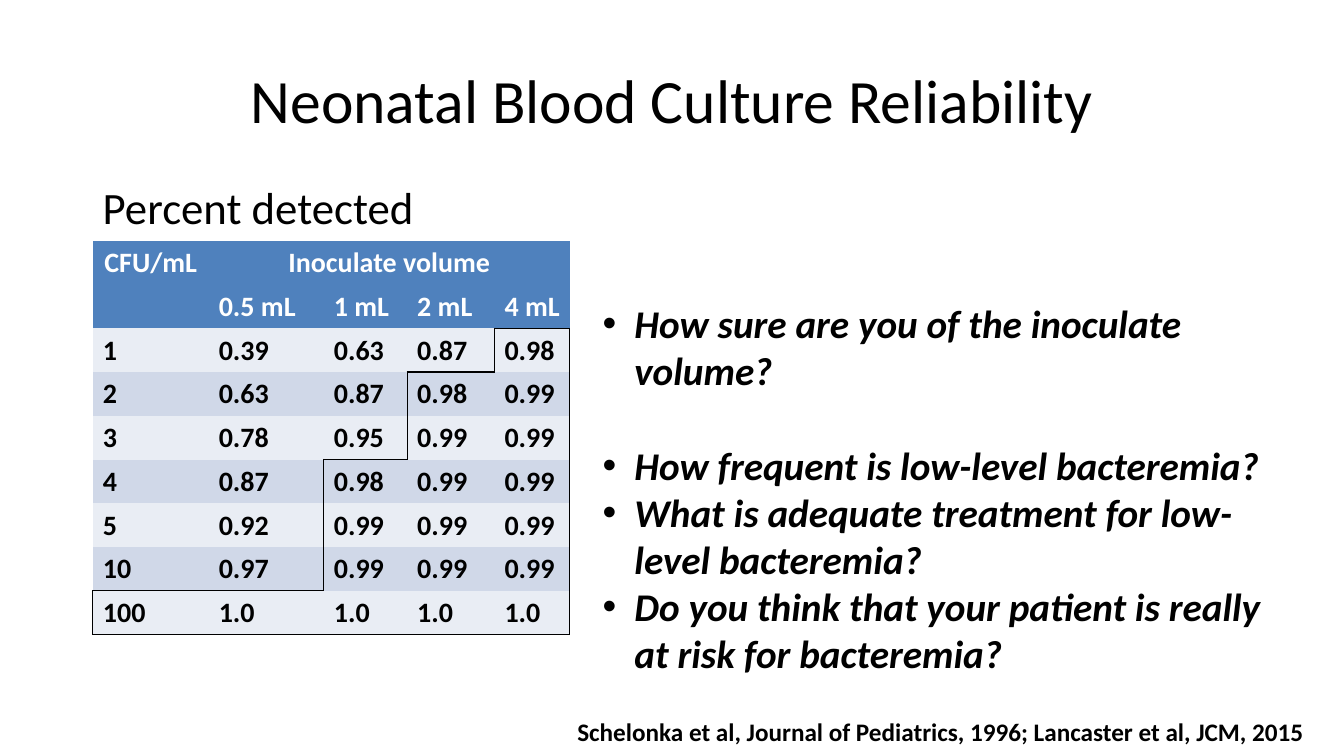
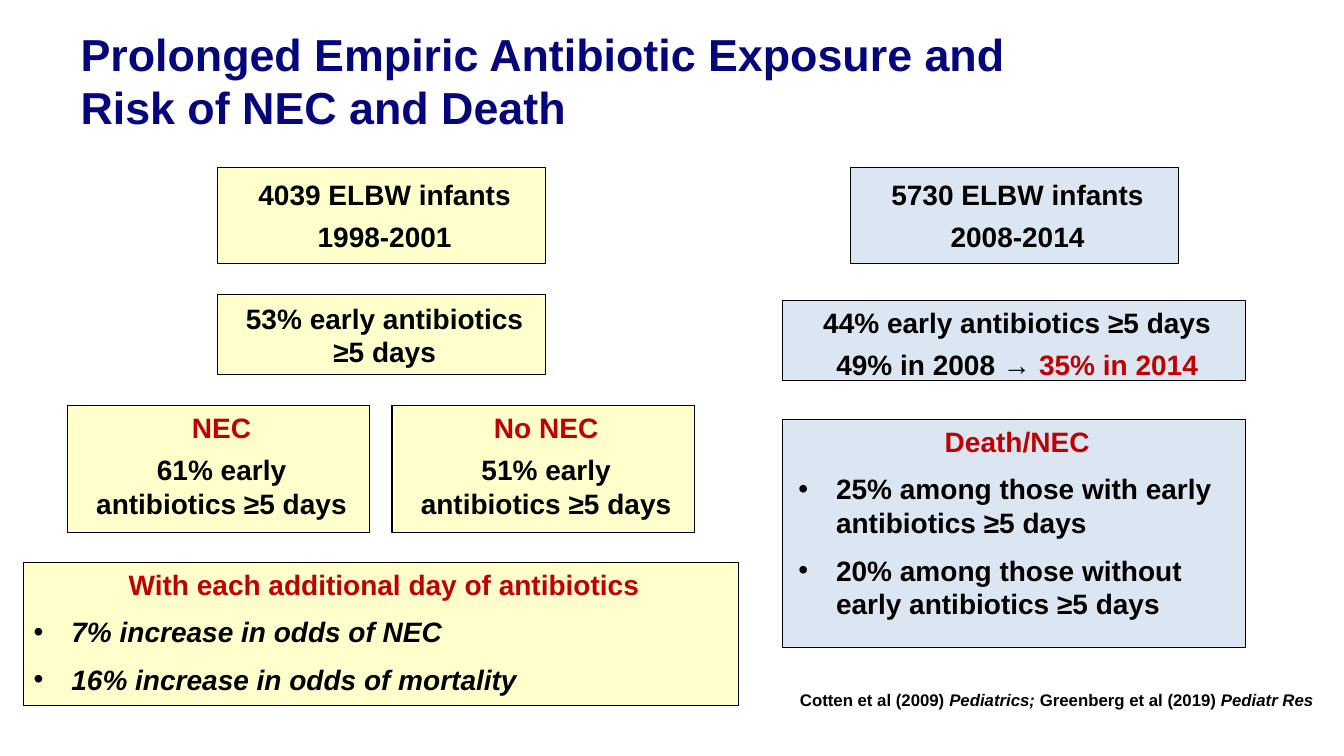
from dataclasses import dataclass
from typing import Optional

from lxml import etree
from pptx import Presentation
from pptx import util as u
from pptx.dml import color
from pptx.enum import shapes, text
from pptx.oxml import ns

COLORS = {
    "black": "000000",
    "white": "FFFFFF",
    "navy": "06067C",
    "red": "C00000",
    "yellow": "FFFFCC",
    "pale": "DCE6F2",
    "header": "4F81BD",
    "light": "E9EDF4",
    "dark": "D0D8E8",
}
LEFT, CENTER = text.PP_ALIGN.LEFT, text.PP_ALIGN.CENTER
TOP, MIDDLE = text.MSO_ANCHOR.TOP, text.MSO_ANCHOR.MIDDLE


@dataclass(frozen=True)
class Style:
    font: str
    size: float
    bold: bool = False
    color: str = "black"


@dataclass(frozen=True)
class Run:
    text: str
    color: Optional[str] = None
    italic: bool = False


@dataclass(frozen=True)
class Para:
    runs: tuple[Run, ...]
    align: text.PP_ALIGN = LEFT
    left: float = 0
    hang: float = 0
    before: float = 0
    after: float = 0


@dataclass(frozen=True)
class Box:
    left: float
    top: float
    width: float
    height: float
    paras: tuple[Para, ...]
    style: Style
    anchor: text.MSO_ANCHOR = TOP
    fill: Optional[str] = None


CAL_TITLE = Style("Calibri", 44)
CAL_BODY = Style("Calibri", 32)
CAL_POINT = Style("Calibri", 28, True)
CAL_SOURCE = Style("Calibri", 18, True)
CAL_HEAD = Style("Calibri", 20, True, "white")
CAL_CELL = Style("Calibri", 20, True)
ARIAL_TITLE = Style("Arial", 32, True, "navy")
ARIAL_BOX = Style("Arial", 20, True)
ARIAL_SOURCE = Style("Arial", 12, True)


def rgb(name: str) -> color.RGBColor:
    return color.RGBColor.from_string(COLORS[name])


def plain(words: str, align: text.PP_ALIGN = LEFT) -> Para:
    return Para((Run(words),), align)


def centered(*runs: Run, gap: float = 3) -> Para:
    return Para(runs, CENTER, left=0.15, before=gap, after=gap)


def bullet(words: str, left: float, hang: float, gap: float = 0,
           after: Optional[float] = None, italic: bool = False) -> Para:
    return Para((Run(words, italic=italic),), LEFT, left, hang, gap,
                gap if after is None else after)


def write(tf: text, paras: tuple[Para, ...], style: Style) -> None:
    for i, para in enumerate(paras):
        p = tf.paragraphs[0] if i == 0 else tf.add_paragraph()
        p.alignment = para.align
        p.space_before, p.space_after = u.Pt(para.before), u.Pt(para.after)
        pPr = p._p.get_or_add_pPr()
        pPr.set("marL", str(u.Cm(para.left)))
        pPr.set("indent", str(-u.Cm(para.hang)))
        if para.hang:
            etree.SubElement(pPr, ns.qn("a:buFont"), typeface="Arial")
            etree.SubElement(pPr, ns.qn("a:buChar"), char="•")
        for run in para.runs:
            for n, line in enumerate(run.text.split("\n")):
                if n:
                    p.add_line_break()
                r = p.add_run()
                r.text = line
                r.font.name, r.font.size = style.font, u.Pt(style.size)
                r.font.bold, r.font.italic = style.bold, run.italic
                r.font.color.rgb = rgb(run.color or style.color)


def draw_box(s, box: Box) -> None:
    frame = [u.Cm(v) for v in (box.left, box.top, box.width, box.height)]
    if box.fill:
        sp = s.shapes.add_shape(shapes.MSO_SHAPE.RECTANGLE, *frame)
        sp.shadow.inherit = False
        sp.fill.solid()
        sp.fill.fore_color.rgb = rgb(box.fill)
        sp.line.color.rgb = rgb("black")
        sp.line.width = u.Pt(0.75)
    else:
        sp = s.shapes.add_textbox(*frame)
    tf = sp.text_frame
    tf.word_wrap = True
    tf.vertical_anchor = box.anchor
    write(tf, box.paras, box.style)


COLUMNS = (2.92, 2.9, 2.1, 2.2, 1.9)
ROW_HEIGHT = 1.1
HEADER = (
    ("CFU/mL", "Inoculate volume", "", "", ""),
    ("", "0.5 mL", "1 mL", "2 mL", "4 mL"),
)
DETECTED = (
    ("1", "0.39", "0.63", "0.87", "0.98"),
    ("2", "0.63", "0.87", "0.98", "0.99"),
    ("3", "0.78", "0.95", "0.99", "0.99"),
    ("4", "0.87", "0.98", "0.99", "0.99"),
    ("5", "0.92", "0.99", "0.99", "0.99"),
    ("10", "0.97", "0.99", "0.99", "0.99"),
    ("100", "1.0", "1.0", "1.0", "1.0"),
)
RELIABLE_FROM = (5, 5, 4, 3, 3, 2, 2, 2, 0)
SIDES = (("a:lnL", 0, -1), ("a:lnR", 0, 1), ("a:lnT", -1, 0), ("a:lnB", 1, 0))


def reliable(row: int, col: int) -> bool:
    return (0 <= row < len(RELIABLE_FROM) and col < len(COLUMNS)
            and col >= RELIABLE_FROM[row])


def outline(cell, row: int, col: int) -> None:
    tcPr = cell._tc.get_or_add_tcPr()
    for i, (tag, down, across) in enumerate(SIDES):
        ln = etree.Element(ns.qn(tag), w=str(u.Pt(1)))
        if reliable(row, col) != reliable(row + down, col + across):
            solid = etree.SubElement(ln, ns.qn("a:solidFill"))
            etree.SubElement(solid, ns.qn("a:srgbClr"), val=COLORS["black"])
        else:
            etree.SubElement(ln, ns.qn("a:noFill"))
        tcPr.insert(i, ln)


def draw_table(s, left: float, top: float) -> None:
    rows = HEADER + DETECTED
    table = s.shapes.add_table(
        len(rows), len(COLUMNS), u.Cm(left), u.Cm(top),
        u.Cm(sum(COLUMNS)), u.Cm(ROW_HEIGHT * len(rows))).table
    for column, width in zip(table.columns, COLUMNS):
        column.width = u.Cm(width)
    for i, values in enumerate(rows):
        table.rows[i].height = u.Cm(ROW_HEIGHT)
        head = i < len(HEADER)
        for j, value in enumerate(values):
            cell = table.cell(i, j)
            cell.fill.solid()
            cell.fill.fore_color.rgb = rgb(
                "header" if head else ("light", "dark")[i % 2])
            outline(cell, i, j)
            if value:
                write(cell.text_frame,
                      (plain(value, CENTER if i == 0 else LEFT),),
                      CAL_HEAD if head else CAL_CELL)
    table.cell(0, 0).merge(table.cell(1, 0))
    table.cell(0, 1).merge(table.cell(0, 4))


def question(words: str, after: float = 0) -> Para:
    return bullet(words, 0.8, 0.8, after=after, italic=True)


def cohort(left: float, infants: str, years: str, fill: str) -> Box:
    return Box(left, 4.22, 8.26, 2.42,
               (centered(Run(infants)), centered(Run(years))),
               ARIAL_BOX, MIDDLE, fill)


def outcome(left: float, name: str, share: str) -> Box:
    return Box(left, 10.23, 7.62, 3.18,
               (centered(Run(name, "red")),
                centered(Run(f"{share} early antibiotics ≥5 days"))),
               ARIAL_BOX, fill="yellow")


RELIABILITY = (
    Box(2.34, 1.02, 29.2, 2.95,
        (plain("Neonatal Blood Culture Reliability", CENTER),),
        CAL_TITLE, MIDDLE),
    Box(2.34, 4.4, 29.2, 1.6, (plain("Percent detected"),), CAL_BODY),
    Box(14.3, 17.93, 19.28, 1.02,
        (plain("Schelonka et al, Journal of Pediatrics, 1996; "
               "Lancaster et al, JCM, 2015"),), CAL_SOURCE),
    Box(14.94, 7.42, 17.6, 9.83,
        (question("How sure are you of the inoculate volume?", after=34),
         question("How frequent is low-level bacteremia?"),
         question("What is adequate treatment for low-level bacteremia?"),
         question("Do you think that your patient is really at risk "
                  "for bacteremia?")), CAL_POINT),
)

EXPOSURE = (
    Box(1.78, 0.43, 28.07, 3.18,
        (plain("Prolonged Empiric Antibiotic Exposure and\n"
               "Risk of NEC and Death"),), ARIAL_TITLE, MIDDLE),
    Box(19.91, 17.25, 13.9, 0.76,
        (Para((Run("Cotten et al (2009) "),
               Run("Pediatrics; ", italic=True),
               Run("Greenberg et al (2019) "),
               Run("Pediatr Res", italic=True))),), ARIAL_SOURCE),
    cohort(5.49, "4039 ELBW infants", "1998-2001", "yellow"),
    Box(5.49, 7.42, 8.26, 2.03,
        (centered(Run("53% early antibiotics ≥5 days"), gap=5),),
        ARIAL_BOX, MIDDLE, "yellow"),
    outcome(1.7, "NEC", "61%"),
    outcome(9.88, "No NEC", "51%"),
    Box(0.6, 14.17, 18.01, 3.61,
        (centered(Run("With each additional day of antibiotics", "red"),
                  gap=5),
         bullet("7% increase in odds of NEC", 0.95, 0.95, 5, italic=True),
         bullet("16% increase in odds of mortality", 0.95, 0.95, 5,
                italic=True)), ARIAL_BOX, fill="yellow"),
    cohort(21.44, "5730 ELBW infants", "2008-2014", "pale"),
    Box(19.72, 7.57, 11.68, 2.03,
        (centered(Run("44% early antibiotics ≥5 days")),
         centered(Run("49% in 2008 → "), Run("35% in 2014", "red"))),
        ARIAL_BOX, fill="pale"),
    Box(19.72, 10.57, 11.68, 5.74,
        (centered(Run("Death/NEC", "red"), gap=5),
         bullet("25% among those with early antibiotics ≥5 days",
                1.1, 0.95, 5),
         bullet("20% among those without early antibiotics ≥5 days",
                1.1, 0.95, 5)), ARIAL_BOX, fill="pale"),
)


def main() -> None:
    prs = Presentation()
    prs.slide_width, prs.slide_height = u.Cm(33.87), u.Cm(19.05)
    slides = []
    for boxes in (RELIABILITY, EXPOSURE):
        s = prs.slides.add_slide(prs.slide_layouts[6])
        for box in boxes:
            draw_box(s, box)
        slides.append(s)
    draw_table(slides[0], 2.34, 6.07)
    prs.save("out.pptx")


if __name__ == "__main__":
    main()
